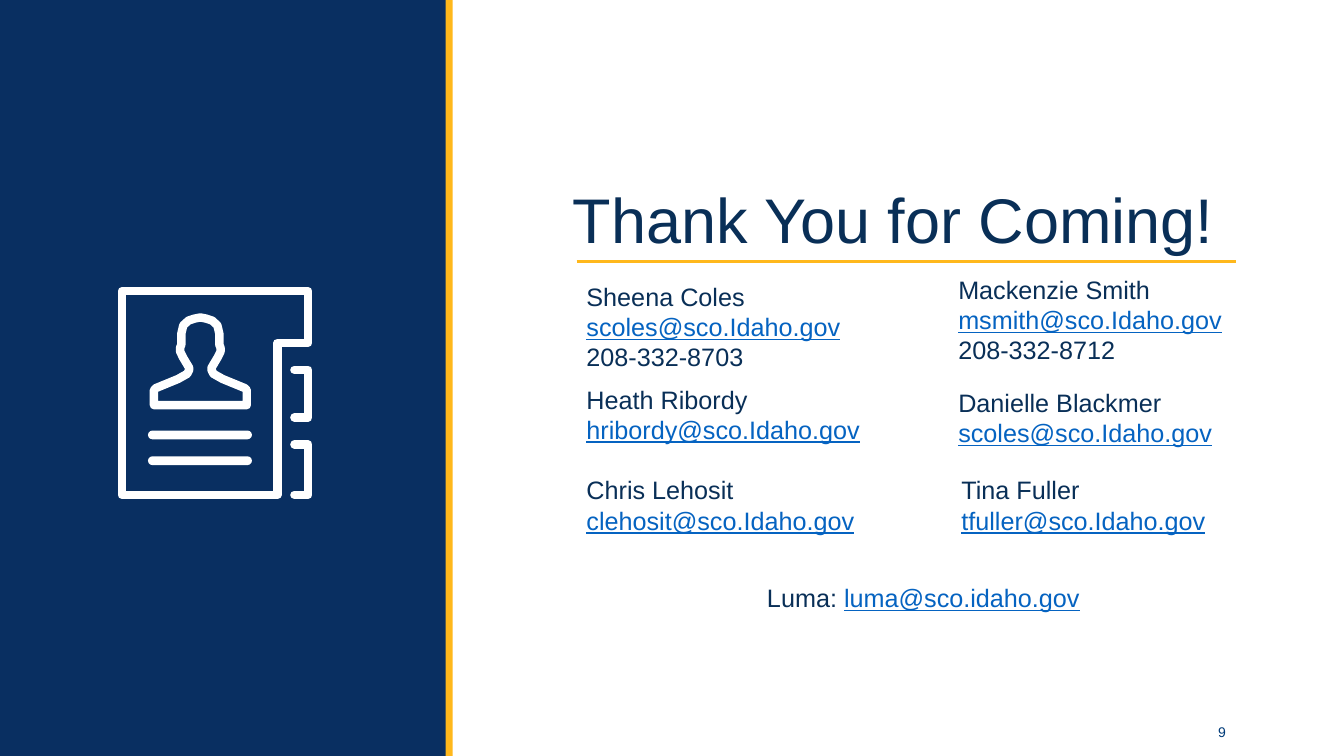
from lxml.etree import SubElement
from pptx import Presentation
from pptx.dml.color import RGBColor
from pptx.enum.shapes import MSO_CONNECTOR, MSO_SHAPE
from pptx.enum.text import MSO_ANCHOR, PP_ALIGN
from pptx.oxml.ns import qn
from pptx.util import Cm, Pt

NAVY, GOLD, INK, LINK, WHITE = "092F61", "FFB81C", "092F57", "0563C1", "FFFFFF"
WIDE, HIGH = 33.87, 19.05

TITLE = "Thank You for Coming!"
PEOPLE = [
    (14.53, 6.96, ["Sheena Coles", "scoles@sco.Idaho.gov", "208-332-8703"]),
    (23.9, 6.78, ["Mackenzie Smith", "msmith@sco.Idaho.gov", "208-332-8712"]),
    (14.53, 9.55, ["Heath Ribordy", "hribordy@sco.Idaho.gov"]),
    (23.9, 9.63, ["Danielle Blackmer", "scoles@sco.Idaho.gov"]),
    (14.53, 11.84, ["Chris Lehosit", "clehosit@sco.Idaho.gov"]),
    (23.98, 11.84, ["Tina Fuller", "tfuller@sco.Idaho.gov"]),
]
TEAM = ["Luma: ", "luma@sco.idaho.gov"]

FRAME = [(3.07, 7.34), (7.77, 7.34), (7.77, 8.64), (6.99, 8.64),
         (6.99, 12.47), (3.07, 12.47)]
TABS = [(9.32, 10.52), (11.2, 12.47)]
BARS = [10.85, 11.5]
MID = 5.05
HALF = [(1.17, 10.21), (1.17, 9.83), (1.12, 9.78), (0.56, 9.55), (0.33, 9.42),
        (0.28, 9.32), (0.28, 9.27), (0.43, 9.02), (0.51, 8.86), (0.51, 8.76),
        (0.48, 8.69), (0.48, 8.41), (0.43, 8.2), (0.3, 8.08), (0.15, 8.03),
        (0, 8)]

deck = Presentation()
deck.slide_width, deck.slide_height = Cm(WIDE), Cm(HIGH)
slide = deck.slides.add_slide(deck.slide_layouts[6])
shapes = slide.shapes


def paint(target, code):
    if hasattr(target, "solid"):
        target.solid()
        target.fore_color.rgb = RGBColor.from_string(code)
    else:
        target.color.rgb = RGBColor.from_string(code)


def block(kind, box, code):
    shape = shapes.add_shape(kind, *map(Cm, box))
    shape.shadow.inherit = False
    paint(shape.fill, code)
    shape.line.fill.background()
    return shape


def write(box, lines, size=18, code=INK, align=PP_ALIGN.LEFT):
    frame = shapes.add_textbox(*map(Cm, box)).text_frame
    frame.word_wrap = True
    for i, runs in enumerate(lines):
        para = frame.add_paragraph() if i else frame.paragraphs[0]
        para.alignment = align
        para.font.name, para.font.size = "Arial", Pt(size)
        paint(para.font, code)
        for text in runs:
            run = para.add_run()
            run.text = text
            if "@" in text:
                run.font.underline = True
                paint(run.font, LINK)
    return frame


def trace(points, close):
    first, *rest = [(Cm(x), Cm(y)) for x, y in points]
    path = shapes.build_freeform(*first)
    path.add_line_segments(rest, close=close)
    shape = path.convert_to_shape()
    shape.shadow.inherit = False
    shape.fill.background()
    paint(shape.line, WHITE)
    shape.line.width = Pt(6)
    line = shape.line.fill._xPr
    line.set("cap", "rnd")
    SubElement(line, qn("a:round"))


block(MSO_SHAPE.RECTANGLE, (0, 0, 11.25, HIGH), NAVY)
block(MSO_SHAPE.RECTANGLE, (11.23, 0, 0.18, HIGH), GOLD)

head = write((13.49, 4.65, 18.03, 2.13), [[TITLE]], 45, align=PP_ALIGN.CENTER)
head.margin_left = head.margin_right = 0
head.paragraphs[0].line_spacing = 0.9

page = write((27.51, 17.93, 3.63, 1.02), [["9"]], 10, "003B79", PP_ALIGN.RIGHT)
page.vertical_anchor = MSO_ANCHOR.MIDDLE

rule = shapes.add_connector(MSO_CONNECTOR.STRAIGHT, Cm(14.53), Cm(6.6),
                            Cm(31.14), Cm(6.6))
paint(rule.line, GOLD)
rule.line.width = Pt(2.25)
SubElement(rule._element.spPr, qn("a:effectLst"))

for x, y, lines in PEOPLE:
    write((x, y, 7.92, 2.57), [[line] for line in lines])
write((19.08, 14.55, 8.53, 1.02), [TEAM])

trace(FRAME, True)
for top, base in TABS:
    trace([(7.42, top), (7.77, top), (7.77, base), (7.42, base)], False)
for y in BARS:
    bar = block(MSO_SHAPE.ROUNDED_RECTANGLE, (3.73, y, 2.62, 0.22), WHITE)
    bar.adjustments[0] = 0.5
left = [(MID - dx, y) for dx, y in HALF]
right = [(MID + dx, y) for dx, y in HALF[-2::-1]]
trace(left + right, True)

deck.save("out.pptx")
